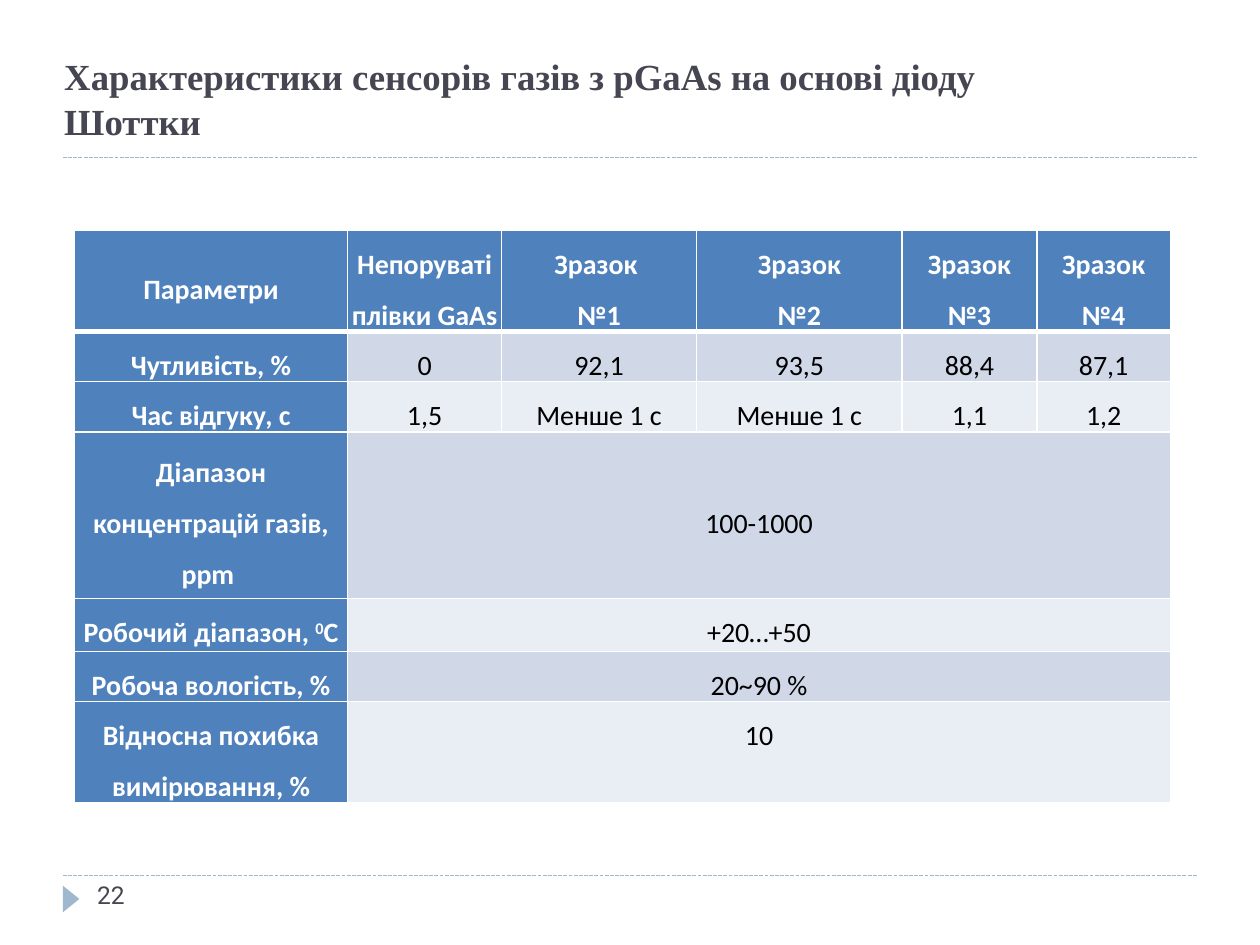
from pptx import Presentation
from pptx import util as u
from pptx.dml.color import RGBColor
from pptx.enum import dml, shapes, text
from pptx.oxml import parse_xml
from pptx.oxml.ns import nsdecls

WHITE = RGBColor(0xFF, 0xFF, 0xFF)
BLACK = RGBColor(0, 0, 0)
SLATE = RGBColor(0x46, 0x46, 0x52)
ACCENT = RGBColor(0x9F, 0xB8, 0xCD)
BLUE = RGBColor(0x4F, 0x81, 0xBD)
BANDS = RGBColor(0xE9, 0xED, 0xF4), RGBColor(0xD0, 0xD8, 0xE8)

COLS = [2.17, 1.22, 1.55, 1.63, 1.07, 1.06]
HEIGHTS = [0.79, 0.4, 0.4, 1.32, 0.42, 0.4, 0.8]
ROWS = [
    ["Параметри", "Непоруваті плівки GaAs", "Зразок \n№1", "Зразок\n№2", "Зразок\n№3", "Зразок\n№4"],
    ["Чутливість, %", "0", "92,1", "93,5", "88,4", "87,1"],
    ["Час відгуку, с", "1,5", "Менше 1 с", "Менше 1 с", "1,1", "1,2"],
    ["Діапазон концентрацій газів, ppm ", "100-1000"],
    ["Робочий діапазон, ^0^С", "+20…+50"],
    ["Робоча вологість, %", "20~90\u00a0%"],
    ["Відносна похибка вимірювання, %", "10"],
]


def write(tf, content, *, font, size, color, bold=False, align=text.PP_ALIGN.LEFT, spacing=None):
    """Fill a text frame; newlines split paragraphs and carets enclose superscripts."""
    tf.word_wrap = True
    for i, line in enumerate(content.split("\n")):
        p = tf.add_paragraph() if i else tf.paragraphs[0]
        p.alignment = align
        p.line_spacing = spacing
        for j, part in enumerate(line.split("^")):
            r = p.add_run()
            r.text = part
            r.font.name, r.font.size, r.font.bold = font, u.Pt(size), bold
            r.font.color.rgb = color
            if j % 2:
                r.font._element.set("baseline", "30000")


class SlideBuilder:
    """Draw styled elements on the current slide."""

    def __init__(self, s):
        self.s = s

    def rule(self, y):
        """Draw a dashed rule across the slide."""
        sp = self.s.shapes.add_connector(
            shapes.MSO_CONNECTOR.STRAIGHT, u.Inches(0.5), u.Inches(y), u.Inches(9.5), u.Inches(y))
        sp.line.color.rgb = ACCENT
        sp.line.width = u.Pt(0.75)
        sp.line.dash_style = dml.MSO_LINE.SQUARE_DOT
        sp._element.spPr.append(parse_xml(f"<a:effectLst {nsdecls('a')}/>"))

    def marker(self, x, y, w, h):
        """Draw a triangle pointing right."""
        fb = self.s.shapes.build_freeform(u.Inches(x), u.Inches(y))
        fb.add_line_segments(
            [(u.Inches(x), u.Inches(y + h)), (u.Inches(x + w), u.Inches(y + h / 2))], close=True)
        sp = fb.convert_to_shape()
        sp.shadow.inherit = False
        sp.fill.solid()
        sp.fill.fore_color.rgb = ACCENT
        sp.line.fill.background()

    def label(self, content, x, y, w, h, **style):
        """Add a text box without insets."""
        tf = self.s.shapes.add_textbox(*map(u.Inches, (x, y, w, h))).text_frame
        tf.margin_left = tf.margin_right = tf.margin_bottom = 0
        tf.margin_top = u.Inches(0.01)
        write(tf, content, color=SLATE, **style)

    def cell(self, cell, content, fill, color, bold, anchor, bottom):
        """Format one table cell with white borders."""
        tcPr = cell._tc.get_or_add_tcPr()
        for side, width in zip("LRTB", (1, 1, 1, bottom)):
            tcPr.append(parse_xml(
                f'<a:ln{side} {nsdecls("a")} w="{u.Pt(width)}"><a:solidFill>'
                f'<a:srgbClr val="{WHITE}"/></a:solidFill></a:ln{side}>'))
        cell.fill.solid()
        cell.fill.fore_color.rgb = fill
        cell.margin_left = cell.margin_right = u.Inches(0.02)
        cell.margin_top = cell.margin_bottom = 0
        cell.vertical_anchor = anchor
        if content:
            write(cell.text_frame, content, font="Calibri", size=16, color=color, bold=bold,
                  align=text.PP_ALIGN.CENTER, spacing=1.5)

    def table(self, x, y):
        """Add the sensor table, merging rows that share one value."""
        table = self.s.shapes.add_table(
            len(ROWS), len(COLS), *map(u.Inches, (x, y, sum(COLS), sum(HEIGHTS)))).table
        for col, width in zip(table.columns, COLS):
            col.width = u.Inches(width)
        for i, (values, height) in enumerate(zip(ROWS, HEIGHTS)):
            table.rows[i].height = u.Inches(height)
            anchor = text.MSO_ANCHOR.MIDDLE if i < 5 else text.MSO_ANCHOR.TOP
            if len(values) == 2:
                table.cell(i, 1).merge(table.cell(i, len(COLS) - 1))
            for j in range(len(COLS)):
                head = i == 0 or j == 0
                self.cell(table.cell(i, j), values[j] if j < len(values) else "",
                          BLUE if head else BANDS[i % 2], WHITE if head else BLACK,
                          head, anchor, 1 if i else 3)


def main():
    """Build and save the slide."""
    prs = Presentation()
    prs.slide_width, prs.slide_height = u.Inches(10), u.Inches(7.5)
    b = SlideBuilder(prs.slides.add_slide(prs.slide_layouts[6]))
    b.rule(6.95)
    b.rule(1.25)
    b.marker(0.5, 7.03, 0.13, 0.21)
    b.label("Характеристики сенсорів газів з pGaAs на основі діоду Шоттки",
            0.51, 0.42, 8.02, 0.72, font="Times New Roman", size=21, bold=True)
    b.label("22", 0.77, 7.01, 0.28, 0.22, font="Roboto", size=14, spacing=u.Pt(14.3))
    b.table(0.59, 1.83)
    prs.save("out.pptx")


if __name__ == "__main__":
    main()
